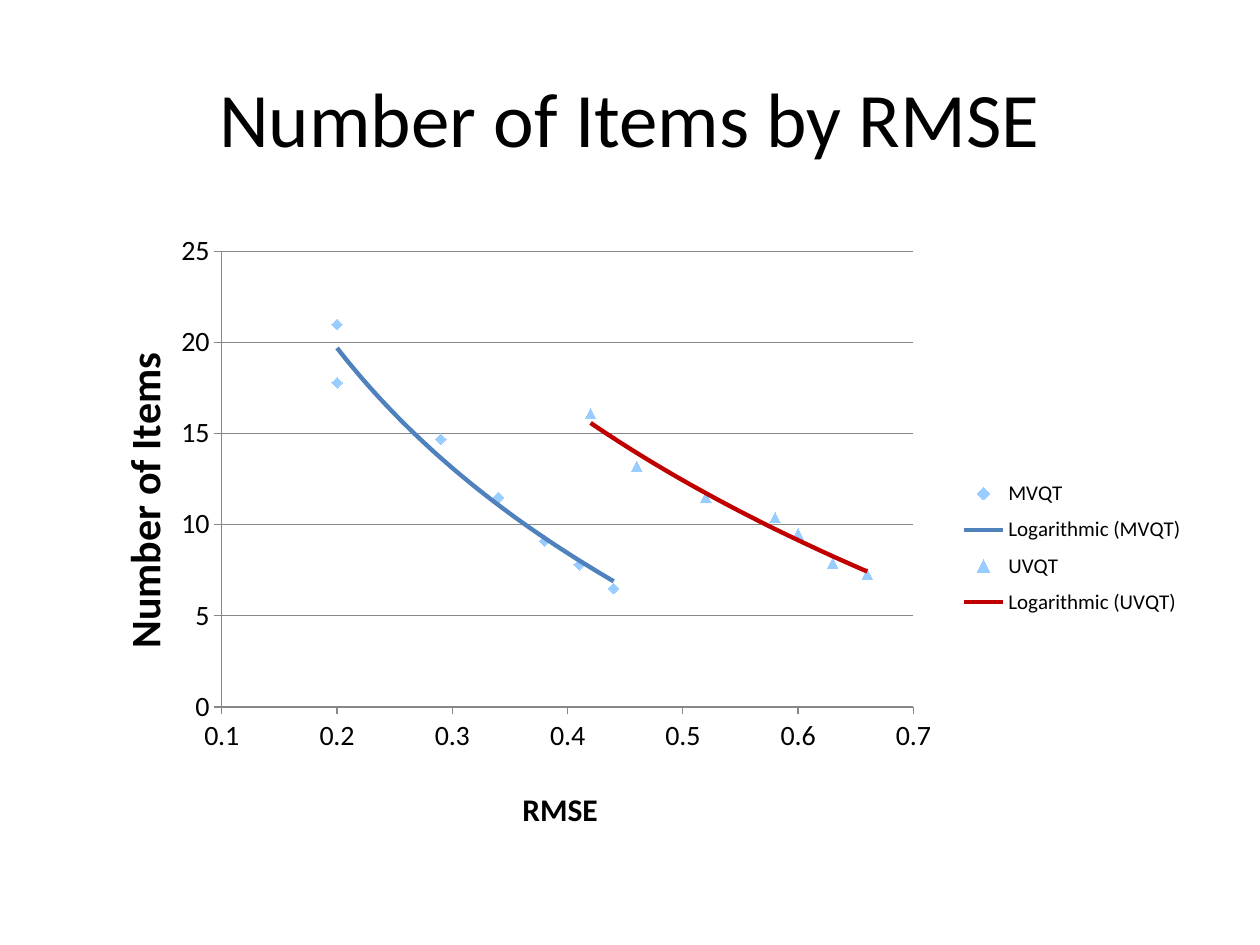
from lxml.etree import SubElement
from pptx import Presentation
from pptx.chart.data import XyChartData
from pptx.dml.color import RGBColor
from pptx.enum.chart import XL_CHART_TYPE, XL_LEGEND_POSITION, XL_MARKER_STYLE, XL_TICK_MARK
from pptx.enum.text import MSO_ANCHOR, PP_ALIGN
from pptx.oxml import parse_xml
from pptx.oxml.ns import nsdecls, qn
from pptx.util import Inches, Pt

FONT = "Calibri"
BLACK = RGBColor(0x00, 0x00, 0x00)
GREY = RGBColor(0x87, 0x87, 0x87)
LIGHT_BLUE = RGBColor(0x99, 0xCC, 0xFF)
BLUE = RGBColor(0x4F, 0x81, 0xBD)
RED = RGBColor(0xC0, 0x00, 0x00)

TESTS = {
    "MVQT": {
        "rmse": [0.2, 0.2, 0.29, 0.34, 0.38, 0.41, 0.44],
        "items": [21, 17.8, 14.7, 11.5, 9.1, 7.8, 6.5],
        "marker": XL_MARKER_STYLE.DIAMOND,
        "trend": BLUE,
    },
    "UVQT": {
        "rmse": [0.42, 0.46, 0.52, 0.58, 0.6, 0.63, 0.66],
        "items": [16.1, 13.2, 11.5, 10.4, 9.5, 7.9, 7.3],
        "marker": XL_MARKER_STYLE.TRIANGLE,
        "trend": RED,
    },
}


def set_attributes(target, values):
    """Set each named attribute of the target."""
    for name, value in values.items():
        setattr(target, name, value)


def format_font(font, size, bold=False):
    """Apply the slide typeface in black."""
    set_attributes(font, {"name": FONT, "size": Pt(size), "bold": bold})
    font.color.rgb = BLACK


def format_line(line, color, width):
    """Give a line a solid colour and a width in points."""
    line.color.rgb = color
    line.width = Pt(width)


def place(element, position, fractions, inner=False):
    """Place a chart part by fractions of the chart area."""
    for old_layout in element.findall(qn("c:layout")):
        element.remove(old_layout)
    layout = parse_xml(f"<c:layout {nsdecls('c')}><c:manualLayout/></c:layout>")
    values = {"layoutTarget": "inner"} if inner else {}
    values.update(xMode="edge", yMode="edge")
    values.update(zip("xywh", fractions))
    for tag, value in values.items():
        SubElement(layout[0], qn(f"c:{tag}")).set("val", str(value))
    element.insert(position, layout)


def add_title(slide, text):
    """Fill and format the title placeholder."""
    title = slide.shapes.title
    set_attributes(title, {"left": Inches(0.5), "top": Inches(0.3),
                           "width": Inches(9), "height": Inches(1.25)})
    frame = title.text_frame
    set_attributes(frame, {"text": text, "vertical_anchor": MSO_ANCHOR.MIDDLE})
    frame.paragraphs[0].alignment = PP_ALIGN.CENTER
    format_font(frame.paragraphs[0].runs[0].font, 44)


def format_axis(axis, title, title_size, title_corner, scale):
    """Set the scale, ticks, labels and title of an axis."""
    set_attributes(axis, scale)
    set_attributes(axis, {"major_tick_mark": XL_TICK_MARK.OUTSIDE,
                          "minor_tick_mark": XL_TICK_MARK.NONE})
    set_attributes(axis.tick_labels, {"number_format": "General",
                                      "number_format_is_linked": False})
    format_font(axis.tick_labels.font, 16)
    format_line(axis.format.line, GREY, 0.75)
    frame = axis.axis_title.text_frame
    frame.text = title
    format_font(frame.paragraphs[0].runs[0].font, title_size, bold=True)
    place(axis._element.find(qn("c:title")), 1, title_corner)


def add_log_trend(series, color):
    """Add a logarithmic trend line to a series."""
    trend = parse_xml(
        f"<c:trendline {nsdecls('c', 'a')}><c:spPr><a:ln w='{Pt(2.5)}'><a:solidFill>"
        f"<a:srgbClr val='{color}'/></a:solidFill></a:ln></c:spPr>"
        "<c:trendlineType val='log'/><c:dispRSqr val='0'/><c:dispEq val='0'/></c:trendline>")
    series._element.find(qn("c:xVal")).addprevious(trend)


def format_series(series, test):
    """Show a series as markers with a trend line."""
    series.format.line.fill.background()
    marker = series.marker
    set_attributes(marker, {"style": test["marker"], "size": 6})
    marker.format.fill.solid()
    marker.format.fill.fore_color.rgb = LIGHT_BLUE
    marker.format.line.fill.background()
    add_log_trend(series, test["trend"])


def add_legend(chart):
    """Show the legend to the right of the plot."""
    chart.has_legend = True
    legend = chart.legend
    set_attributes(legend, {"position": XL_LEGEND_POSITION.RIGHT, "include_in_layout": False})
    format_font(legend.font, 12)
    place(legend._element, 1, (0.79, 0.4, 0.2, 0.25))


def add_scatter(slide):
    """Add the scatter chart of item counts by error."""
    data = XyChartData()
    for name, test in TESTS.items():
        points = data.add_series(name)
        for rmse, items in zip(test["rmse"], test["items"]):
            points.add_data_point(rmse, items)
    chart = slide.shapes.add_chart(XL_CHART_TYPE.XY_SCATTER, Inches(0.5), Inches(1.75),
                                   Inches(9), Inches(4.95), data).chart
    chart.has_title = False
    format_font(chart.font, 10)
    plot = chart.plots[0]
    plot.vary_by_categories = False
    for series, test in zip(plot.series, TESTS.values()):
        format_series(series, test)
    format_axis(chart.category_axis, "RMSE", 18, (0.4, 0.9),
                {"minimum_scale": 0.1, "maximum_scale": 0.7, "major_unit": 0.1,
                 "has_major_gridlines": False})
    format_axis(chart.value_axis, "Number of Items", 24, (0.04, 0.2),
                {"minimum_scale": 0, "maximum_scale": 25, "major_unit": 5,
                 "has_major_gridlines": True})
    format_line(chart.value_axis.major_gridlines.format.line, GREY, 0.75)
    add_legend(chart)
    place(chart._chartSpace.chart.plotArea, 0, (0.14, 0.05, 0.61, 0.73), inner=True)


def main():
    """Build and save the slide."""
    presentation = Presentation()
    set_attributes(presentation, {"slide_width": Inches(10), "slide_height": Inches(7.5)})
    slide = presentation.slides.add_slide(presentation.slide_layouts[5])
    add_title(slide, "Number of Items by RMSE")
    add_scatter(slide)
    presentation.save("out.pptx")


if __name__ == "__main__":
    main()
